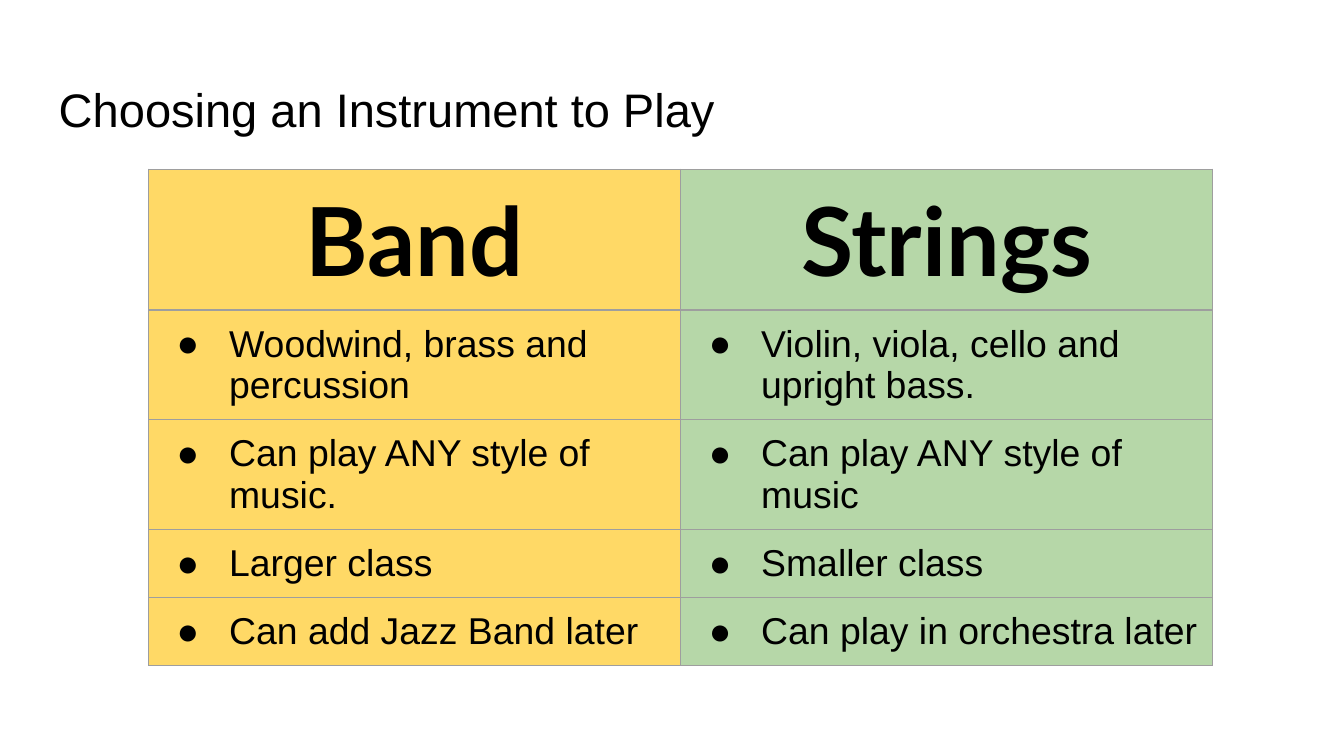
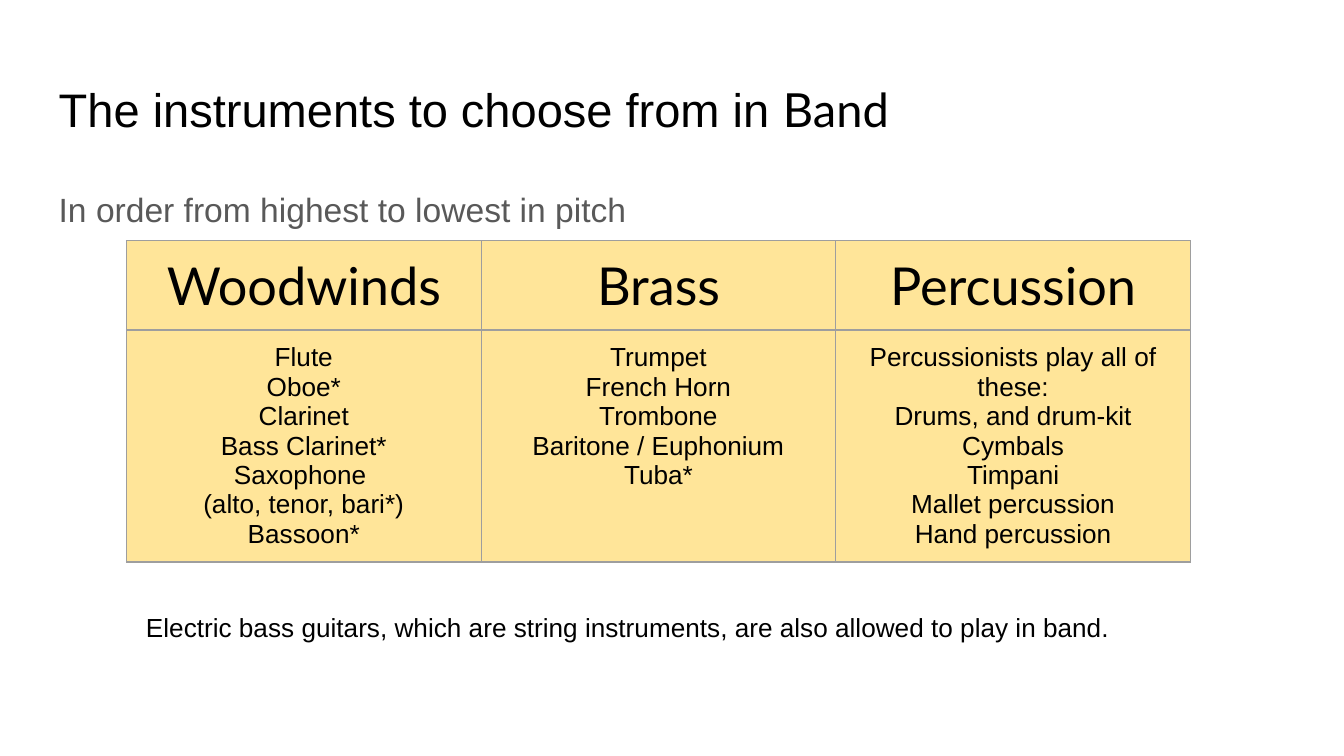
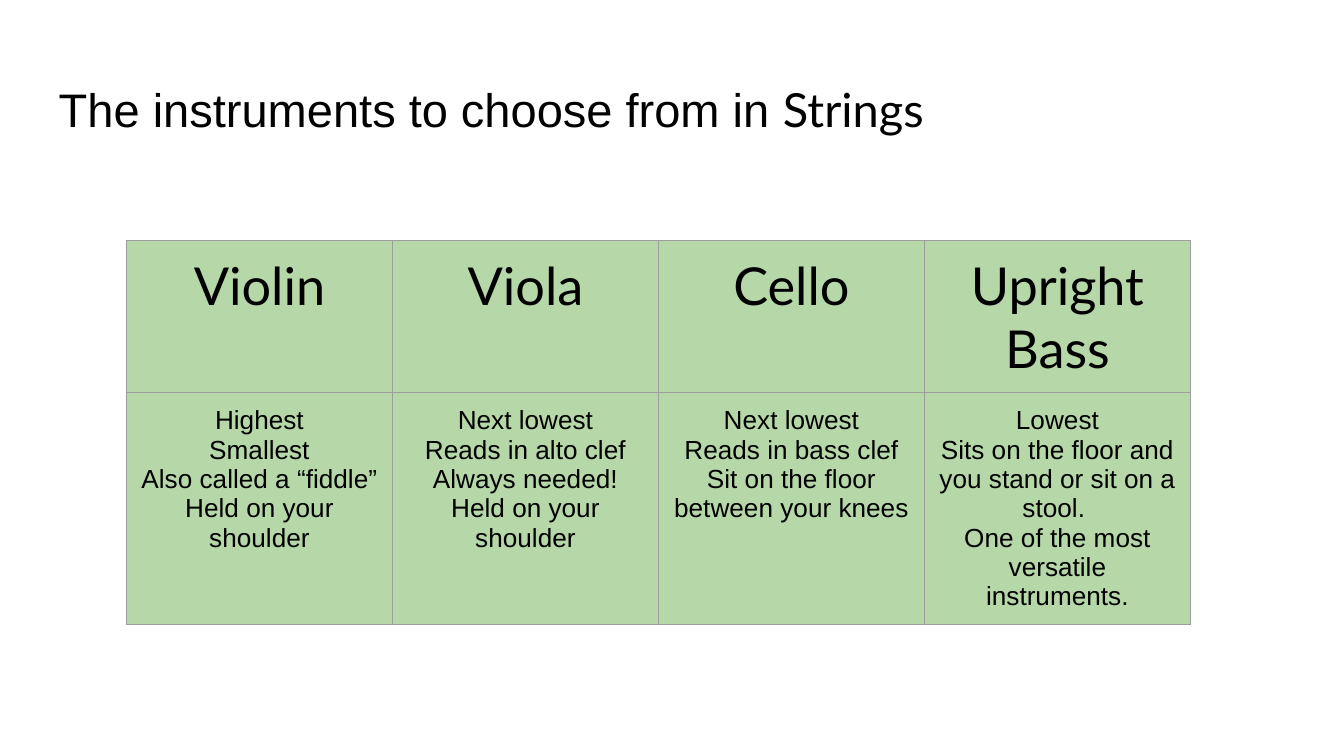
import dataclasses
from typing import Optional

import lxml.etree
import pptx
import pptx.dml.color
import pptx.enum.text
import pptx.oxml.ns
import pptx.slide
import pptx.table
import pptx.text.text
import pptx.util

Cm = pptx.util.Cm
Pt = pptx.util.Pt
RGBColor = pptx.dml.color.RGBColor
Align = pptx.enum.text.PP_ALIGN
Anchor = pptx.enum.text.MSO_ANCHOR
qn = pptx.oxml.ns.qn

BLACK = RGBColor(0x00, 0x00, 0x00)
GRAY = RGBColor(0x59, 0x59, 0x59)
BORDER = RGBColor(0x9E, 0x9E, 0x9E)
GOLD = RGBColor(0xFF, 0xD9, 0x66)
PALE_GOLD = RGBColor(0xFF, 0xE5, 0x99)
GREEN = RGBColor(0xB6, 0xD7, 0xA8)

BODY_FONT = "Arial"
ACCENT_FONT = "Lato"
INSET = Cm(0.25)
MARGIN = Cm(0.86)
CONTENT_WIDTH = Cm(23.67)
TITLE_SIZE = 25.2
TABLE_WIDTH = Cm(20.11)
ROW_HEIGHT = Cm(1.07)
BULLET_MARGIN = Cm(1.27)
BULLET_HANG = Cm(0.99)


@dataclasses.dataclass(frozen=True)
class Column:
    heading: str
    entries: list[str]
    fill: RGBColor


@dataclasses.dataclass(frozen=True)
class InstrumentTable:
    left: pptx.util.Length
    top: pptx.util.Length
    columns: list[Column]
    heading_size: float = 28
    heading_bold: bool = False
    entry_size: float = 14
    bulleted_rows: bool = False


BAND_OR_STRINGS = InstrumentTable(
    Cm(2.81), Cm(3.2),
    [
        Column("Band", ["Woodwind, brass and percussion", "Can play ANY style of music.",
                        "Larger class", "Can add Jazz Band later"], GOLD),
        Column("Strings", ["Violin, viola, cello and upright bass.", "Can play ANY style of music",
                           "Smaller class", "Can play in orchestra later"], GREEN),
    ],
    heading_size=51, heading_bold=True, entry_size=20, bulleted_rows=True,
)
BAND_INSTRUMENTS = InstrumentTable(
    Cm(2.39), Cm(4.55),
    [
        Column("Woodwinds", ["Flute", "Oboe*", "Clarinet", "Bass Clarinet*", "Saxophone ",
                             "(alto, tenor, bari*)", "Bassoon*"], PALE_GOLD),
        Column("Brass", ["Trumpet", "French Horn", "Trombone", "Baritone / Euphonium",
                         "Tuba*"], PALE_GOLD),
        Column("Percussion", ["Percussionists play all of these:", "Drums, and drum-kit",
                              "Cymbals", "Timpani", "Mallet percussion",
                              "Hand percussion"], PALE_GOLD),
    ],
)
STRING_INSTRUMENTS = InstrumentTable(
    Cm(2.39), Cm(4.55),
    [
        Column("Violin", ["Highest", "Smallest", "Also called a “fiddle”",
                          "Held on your shoulder"], GREEN),
        Column("Viola", ["Next lowest", "Reads in alto clef", "Always needed!",
                         "Held on your shoulder"], GREEN),
        Column("Cello", ["Next lowest", "Reads in bass clef",
                         "Sit on the floor between your knees"], GREEN),
        Column("Upright Bass", ["Lowest", "Sits on the floor and you stand or sit on a stool. ",
                                "One of the most versatile instruments."], GREEN),
    ],
)


def add_text(paragraph: pptx.text.text._Paragraph, text: str, *, size: float,
             font: str = BODY_FONT, color: RGBColor = BLACK, bold: bool = False,
             align: Align = Align.LEFT) -> None:
    paragraph.alignment = align
    run = paragraph.add_run()
    run.text = text
    run.font.size = Pt(size)
    run.font.name = font
    run.font.bold = bold
    run.font.color.rgb = color


def set_frame(frame: pptx.text.text.TextFrame, anchor: Anchor) -> None:
    frame.word_wrap = True
    frame.auto_size = pptx.enum.text.MSO_AUTO_SIZE.NONE
    frame.vertical_anchor = anchor
    frame.margin_left = frame.margin_right = INSET
    frame.margin_top = frame.margin_bottom = INSET


def add_title_slide(presentation: pptx.presentation.Presentation, text: str,
                    accent: Optional[str] = None) -> pptx.slide.Slide:
    slide = presentation.slides.add_slide(presentation.slide_layouts[5])
    title = slide.shapes.title
    title.left, title.top = MARGIN, Cm(1.24)
    title.width, title.height = CONTENT_WIDTH, Cm(1.6)
    set_frame(title.text_frame, Anchor.BOTTOM)
    paragraph = title.text_frame.paragraphs[0]
    add_text(paragraph, text, size=TITLE_SIZE)
    if accent:
        add_text(paragraph, accent, size=TITLE_SIZE, font=ACCENT_FONT)
    return slide


def add_text_box(slide: pptx.slide.Slide, left: pptx.util.Length, top: pptx.util.Length,
                 width: pptx.util.Length, height: pptx.util.Length, text: str, *,
                 size: float, color: RGBColor = BLACK) -> pptx.text.text._Paragraph:
    frame = slide.shapes.add_textbox(left, top, width, height).text_frame
    set_frame(frame, Anchor.TOP)
    paragraph = frame.paragraphs[0]
    add_text(paragraph, text, size=size, color=color)
    return paragraph


def set_bullet(paragraph: pptx.text.text._Paragraph) -> None:
    properties = paragraph._p.get_or_add_pPr()
    properties.set("marL", str(BULLET_MARGIN))
    properties.set("indent", str(-BULLET_HANG))
    color = lxml.etree.SubElement(properties, qn("a:buClr"))
    lxml.etree.SubElement(color, qn("a:srgbClr"), val=str(BLACK))
    lxml.etree.SubElement(properties, qn("a:buFont"), typeface=BODY_FONT)
    lxml.etree.SubElement(properties, qn("a:buChar"), char="●")


def style_cell(cell: pptx.table._Cell, fill: RGBColor) -> None:
    cell.margin_left = cell.margin_right = INSET
    cell.margin_top = cell.margin_bottom = INSET
    cell.vertical_anchor = Anchor.TOP
    properties = cell._tc.get_or_add_tcPr()
    for side in ("a:lnL", "a:lnR", "a:lnT", "a:lnB"):
        line = lxml.etree.SubElement(properties, qn(side), w=str(Pt(0.75)))
        solid = lxml.etree.SubElement(line, qn("a:solidFill"))
        lxml.etree.SubElement(solid, qn("a:srgbClr"), val=str(BORDER))
    cell.fill.solid()
    cell.fill.fore_color.rgb = fill


def add_instrument_table(slide: pptx.slide.Slide, content: InstrumentTable) -> None:
    columns = content.columns
    row_count = 1 + (len(columns[0].entries) if content.bulleted_rows else 1)
    table = slide.shapes.add_table(row_count, len(columns), content.left, content.top,
                                   TABLE_WIDTH, ROW_HEIGHT * row_count).table
    table.first_row = False
    table.horz_banding = False
    for column_index, column in enumerate(columns):
        for row_index in range(row_count):
            style_cell(table.cell(row_index, column_index), column.fill)
        add_text(table.cell(0, column_index).text_frame.paragraphs[0], column.heading,
                 size=content.heading_size, font=ACCENT_FONT, bold=content.heading_bold,
                 align=Align.CENTER)
        for entry_index, entry in enumerate(column.entries):
            if content.bulleted_rows:
                frame = table.cell(entry_index + 1, column_index).text_frame
                set_bullet(frame.paragraphs[0])
                add_text(frame.paragraphs[0], entry, size=content.entry_size)
            else:
                frame = table.cell(1, column_index).text_frame
                paragraph = frame.add_paragraph() if entry_index else frame.paragraphs[0]
                add_text(paragraph, entry, size=content.entry_size, align=Align.CENTER)


def main() -> None:
    presentation = pptx.Presentation()
    presentation.slide_width = Cm(25.4)
    presentation.slide_height = Cm(14.29)

    choice_slide = add_title_slide(presentation, "Choosing an Instrument to Play")
    add_instrument_table(choice_slide, BAND_OR_STRINGS)

    band_slide = add_title_slide(presentation, "The instruments to choose from in ", "Band")
    subtitle = add_text_box(band_slide, MARGIN, Cm(3.2), CONTENT_WIDTH, Cm(8.1),
                            "In order from highest to lowest in pitch", size=18, color=GRAY)
    subtitle.line_spacing = 1.15
    subtitle.space_after = Pt(12)
    add_instrument_table(band_slide, BAND_INSTRUMENTS)
    add_text_box(band_slide, Cm(2.51), Cm(11.3), Cm(19.81), Cm(1.12),
                 "Electric bass guitars, which are string instruments, "
                 "are also allowed to play in band.", size=14)

    strings_slide = add_title_slide(presentation, "The instruments to choose from in ", "Strings")
    add_instrument_table(strings_slide, STRING_INSTRUMENTS)

    presentation.save("out.pptx")


if __name__ == "__main__":
    main()
